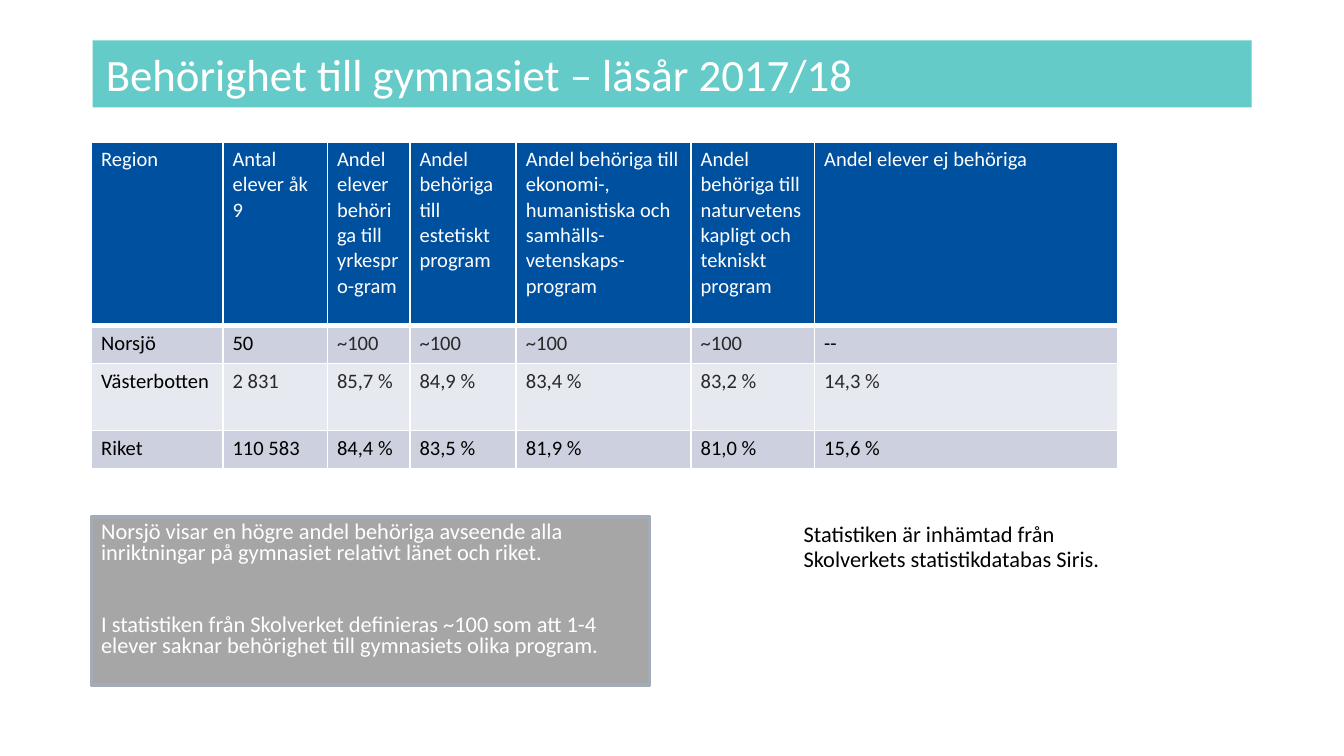
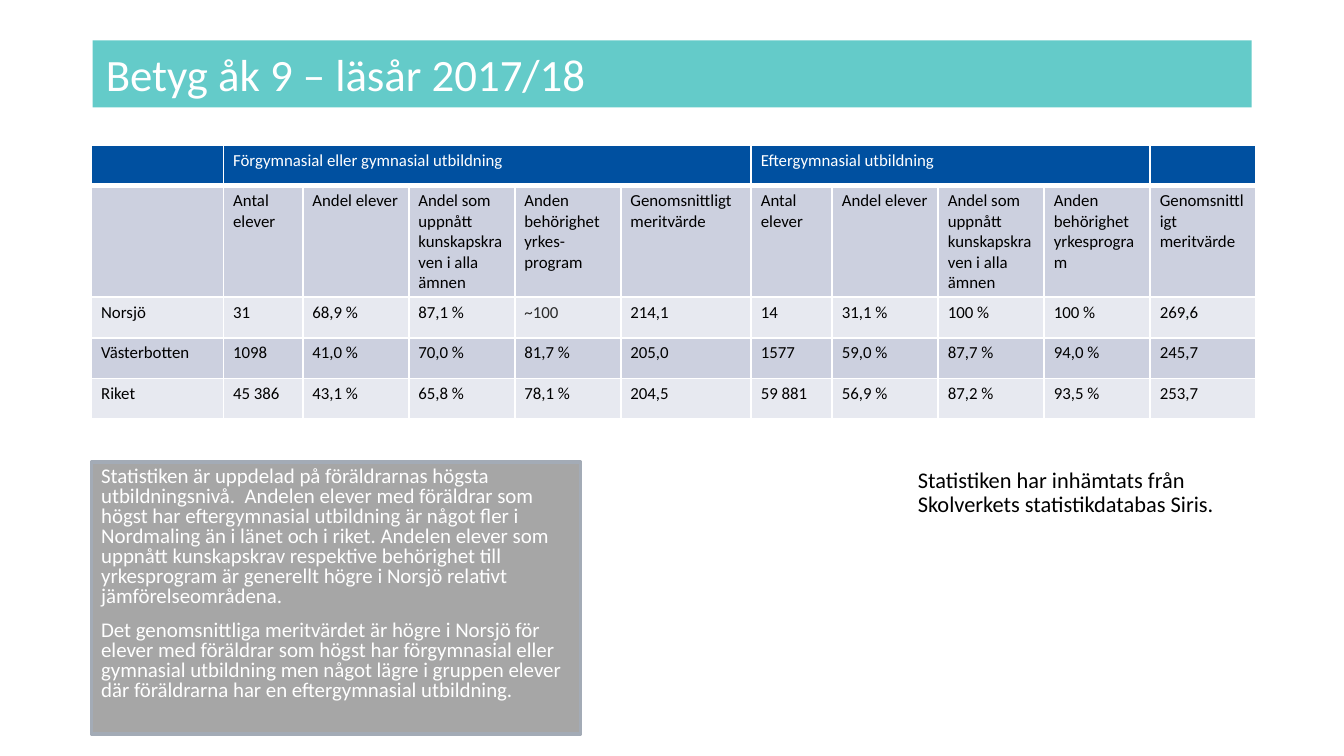
from pptx import Presentation
from pptx.dml.color import RGBColor
from pptx.enum.shapes import MSO_SHAPE
from pptx.enum.text import MSO_ANCHOR, PP_ALIGN
from pptx.oxml import parse_xml
from pptx.oxml.ns import nsdecls
from pptx.util import Pt

FONT = "Calibri"
WHITE = "FFFFFF"
BLACK = "000000"
SOFT_BLACK = "292929"
TEAL = "64CBC9"
NAVY = "0050A0"
BANDS = ("CCD0DF", "E7E9F0")
NOTE_FILL = "A6A6A6"
NOTE_LINE = "A3ABB6"
MARGIN_X, MARGIN_Y = 5.2, 2.7
LEFT = 49

ELIGIBILITY_COLUMNS = [70.4, 56, 44.2, 57, 93.6, 66.2, 162.4]
ELIGIBILITY_HEIGHTS = [98.4, 20.3, 36, 20.3]
ELIGIBILITY_ROWS = [
    ["Region", "Antal elever åk 9", "Andel elever behöriga till yrkespro-gram",
     "Andel behöriga till estetiskt program",
     "Andel behöriga till ekonomi-, humanistiska och samhälls-vetenskaps-program",
     "Andel behöriga till naturvetenskapligt och tekniskt program",
     "Andel elever ej behöriga"],
    ["Norsjö", "50", "~100", "~100", "~100", "~100", "--"],
    ["Västerbotten", "2 831", "85,7 %", "84,9 %", "83,4 %", "83,2 %", "14,3 %"],
    ["Riket", "110 583", "84,4 %", "83,5 %", "81,9 %", "81,0 %", "15,6 %"],
]

GRADE_COLUMNS = [70.7, 42.5, *[56.8] * 3, 69.9, 43.4, *[56.8] * 4]
GRADE_HEIGHTS = [21.6, 59, 21.8, 21.8, 21.8]
GRADE_SPANS = [(1, 5), (6, 9)]
GRADE_ROWS = [
    ["", "Förgymnasial eller gymnasial utbildning", "", "", "", "",
     "Eftergymnasial utbildning", "", "", "", ""],
    ["", "Antal elever", "Andel elever", "Andel som uppnått kunskapskraven i alla ämnen",
     "Anden behörighet yrkes-program", "Genomsnittligt meritvärde",
     "Antal elever", "Andel elever", "Andel som uppnått kunskapskraven i alla ämnen",
     "Anden behörighet yrkesprogram", "Genomsnittligt meritvärde"],
    ["Norsjö", "31", "68,9 %", "87,1 %", "~100", "214,1",
     "14", "31,1 %", "100 %", "100 %", "269,6"],
    ["Västerbotten", "1098", "41,0 %", "70,0 %", "81,7 %", "205,0",
     "1577", "59,0 %", "87,7 %", "94,0 %", "245,7"],
    ["Riket", "45 386", "43,1 %", "65,8 %", "78,1 %", "204,5",
     "59 881", "56,9 %", "87,2 %", "93,5 %", "253,7"],
]


def rgb(value):
    """Turn a hex string into a colour."""
    return RGBColor.from_string(value)


def style_paragraph(paragraph, size, color):
    """Set font, size, colour and left alignment of a paragraph."""
    paragraph.alignment = PP_ALIGN.LEFT
    font = paragraph.font
    font.name, font.size = FONT, Pt(size)
    font.color.rgb = rgb(color)


def write_text(frame, texts, size, color, line_spacing=1.0, gap=0):
    """Fill a text frame with wrapped paragraphs set a gap apart."""
    frame.word_wrap = True
    for index, text in enumerate(texts):
        paragraph = frame.add_paragraph() if index else frame.paragraphs[0]
        paragraph.text = text
        paragraph.line_spacing = line_spacing
        if index:
            paragraph.space_before = Pt(gap)
        style_paragraph(paragraph, size, color)


def add_panel(slide, left, top, width, height, fill, line=None):
    """Add a flat rectangle, with an outline if a line colour is given."""
    shape = slide.shapes.add_shape(
        MSO_SHAPE.RECTANGLE, Pt(left), Pt(top), Pt(width), Pt(height))
    shape.shadow.inherit = False
    shape.fill.solid()
    shape.fill.fore_color.rgb = rgb(fill)
    if line:
        shape.line.color.rgb = rgb(line)
        shape.line.width = Pt(2)
    else:
        shape.line.fill.background()
    return shape


def add_title(slide, text):
    """Add the teal title band."""
    band = add_panel(slide, 49.6, 21.6, 621, 36, TEAL)
    band.text_frame.vertical_anchor = MSO_ANCHOR.MIDDLE
    write_text(band.text_frame, [text], 24, WHITE)


def add_note(slide, top, width, height, texts, size, gap):
    """Add the grey comment panel below the table."""
    frame = add_panel(slide, LEFT, top, width, height, NOTE_FILL, NOTE_LINE).text_frame
    frame.vertical_anchor = MSO_ANCHOR.TOP
    set_margins(frame)
    write_text(frame, texts, size, WHITE, 0.8, gap)


def add_source(slide, left, top, width, height, text):
    """Add the text that tells where the statistics come from."""
    box = slide.shapes.add_textbox(Pt(left), Pt(top), Pt(width), Pt(height))
    write_text(box.text_frame, [text], 12, BLACK, 0.9)


def set_margins(holder):
    """Set the narrow margins shared by table cells and notes."""
    holder.margin_left = holder.margin_right = Pt(MARGIN_X)
    holder.margin_top = holder.margin_bottom = Pt(MARGIN_Y)


def add_borders(cell, is_header):
    """Draw white borders, with a thicker one below the header."""
    for side in "LRTB":
        width = Pt(3 if is_header and side == "B" else 1)
        cell._tc.get_or_add_tcPr().append(parse_xml(
            f'<a:ln{side} {nsdecls("a")} w="{width}"><a:solidFill>'
            f'<a:srgbClr val="{WHITE}"/></a:solidFill></a:ln{side}>'))


def format_cell(cell, text, size, color, fill, is_header):
    """Write and style one table cell."""
    set_margins(cell)
    add_borders(cell, is_header)
    cell.fill.solid()
    cell.fill.fore_color.rgb = rgb(fill)
    paragraph = cell.text_frame.paragraphs[0]
    if text:
        paragraph.text = text
    else:
        paragraph._p.get_or_add_endParaRPr().set("sz", str(size * 100))
    style_paragraph(paragraph, size, color)


def text_color(row, column, text, soft_row):
    """Choose the text colour of a table cell."""
    if row == 0:
        return WHITE
    is_soft = text == "~100" or (row == soft_row and column > 0)
    return SOFT_BLACK if is_soft else BLACK


def add_table(slide, top, columns, heights, rows, size, spans=(), soft_row=None):
    """Add a table with a navy header and banded rows."""
    table = slide.shapes.add_table(
        len(rows), len(columns), Pt(LEFT), Pt(top),
        Pt(sum(columns)), Pt(sum(heights))).table
    table.first_row = table.horz_banding = False
    for column, width in zip(table.columns, columns):
        column.width = Pt(width)
    for row, height in zip(table.rows, heights):
        row.height = Pt(height)
    for first, last in spans:
        table.cell(0, first).merge(table.cell(0, last))
    for row, texts in enumerate(rows):
        fill = BANDS[(row - 1) % 2] if row else NAVY
        for column, text in enumerate(texts):
            color = text_color(row, column, text, soft_row)
            format_cell(table.cell(row, column), text, size, color, fill, row == 0)


def add_eligibility_slide(presentation):
    """Build the slide on eligibility for upper secondary school."""
    slide = presentation.slides.add_slide(presentation.slide_layouts[6])
    add_title(slide, "Behörighet till gymnasiet – läsår 2017/18")
    add_source(slide, 423.4, 277, 174.2, 53,
               "Statistiken är inhämtad från Skolverkets statistikdatabas Siris.")
    add_table(slide, 76, ELIGIBILITY_COLUMNS, ELIGIBILITY_HEIGHTS,
              ELIGIBILITY_ROWS, 11, soft_row=2)
    add_note(slide, 277, 299, 90, [
        "Norsjö visar en högre andel behöriga avseende alla inriktningar på "
        "gymnasiet relativt länet och riket.",
        "I statistiken från Skolverket definieras ~100 som att 1-4 elever saknar "
        "behörighet till gymnasiets olika program.",
    ], 12, 26.7)


def add_grade_slide(presentation):
    """Build the slide on grades in year nine."""
    slide = presentation.slides.add_slide(presentation.slide_layouts[6])
    add_title(slide, "Betyg åk 9 – läsår 2017/18")
    add_table(slide, 78, GRADE_COLUMNS, GRADE_HEIGHTS, GRADE_ROWS, 9, GRADE_SPANS)
    add_source(slide, 484.6, 247.6, 186.5, 78.5,
               "Statistiken har inhämtats från Skolverkets statistikdatabas Siris.")
    add_note(slide, 247.6, 262, 145.6, [
        "Statistiken är uppdelad på föräldrarnas högsta utbildningsnivå.  Andelen "
        "elever med föräldrar som högst har eftergymnasial utbildning är något fler "
        "i Nordmaling än i länet och i riket. Andelen elever som uppnått kunskapskrav "
        "respektive behörighet till yrkesprogram är generellt högre i Norsjö relativt "
        "jämförelseområdena.",
        "Det genomsnittliga meritvärdet är högre i Norsjö för elever med föräldrar som "
        "högst har förgymnasial eller gymnasial utbildning men något lägre i gruppen "
        "elever där föräldrarna har en eftergymnasial utbildning.",
    ], 11.2, 7.5)


def main():
    """Build and save the presentation."""
    presentation = Presentation()
    presentation.slide_width, presentation.slide_height = Pt(720), Pt(405)
    add_eligibility_slide(presentation)
    add_grade_slide(presentation)
    presentation.save("out.pptx")


if __name__ == "__main__":
    main()
